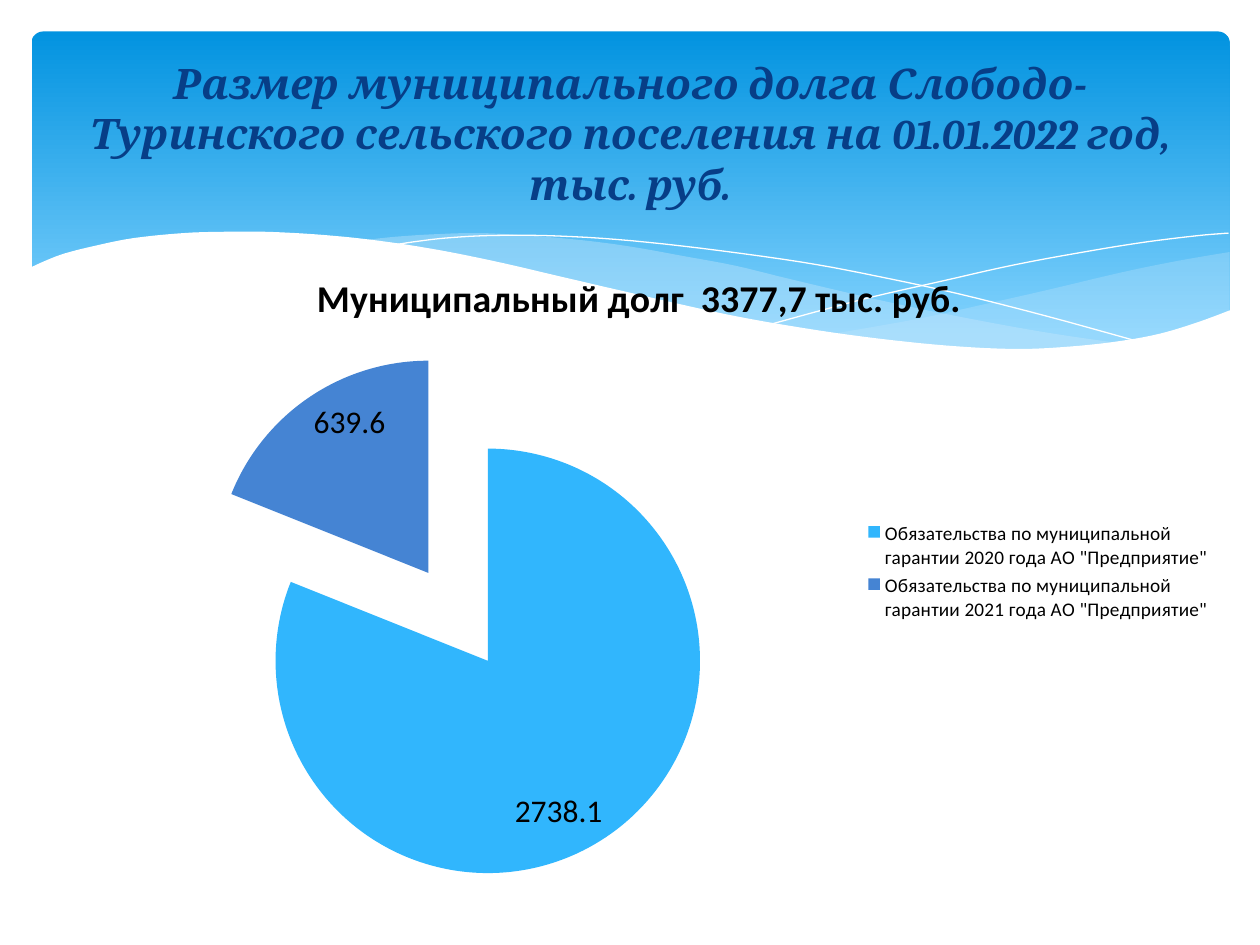
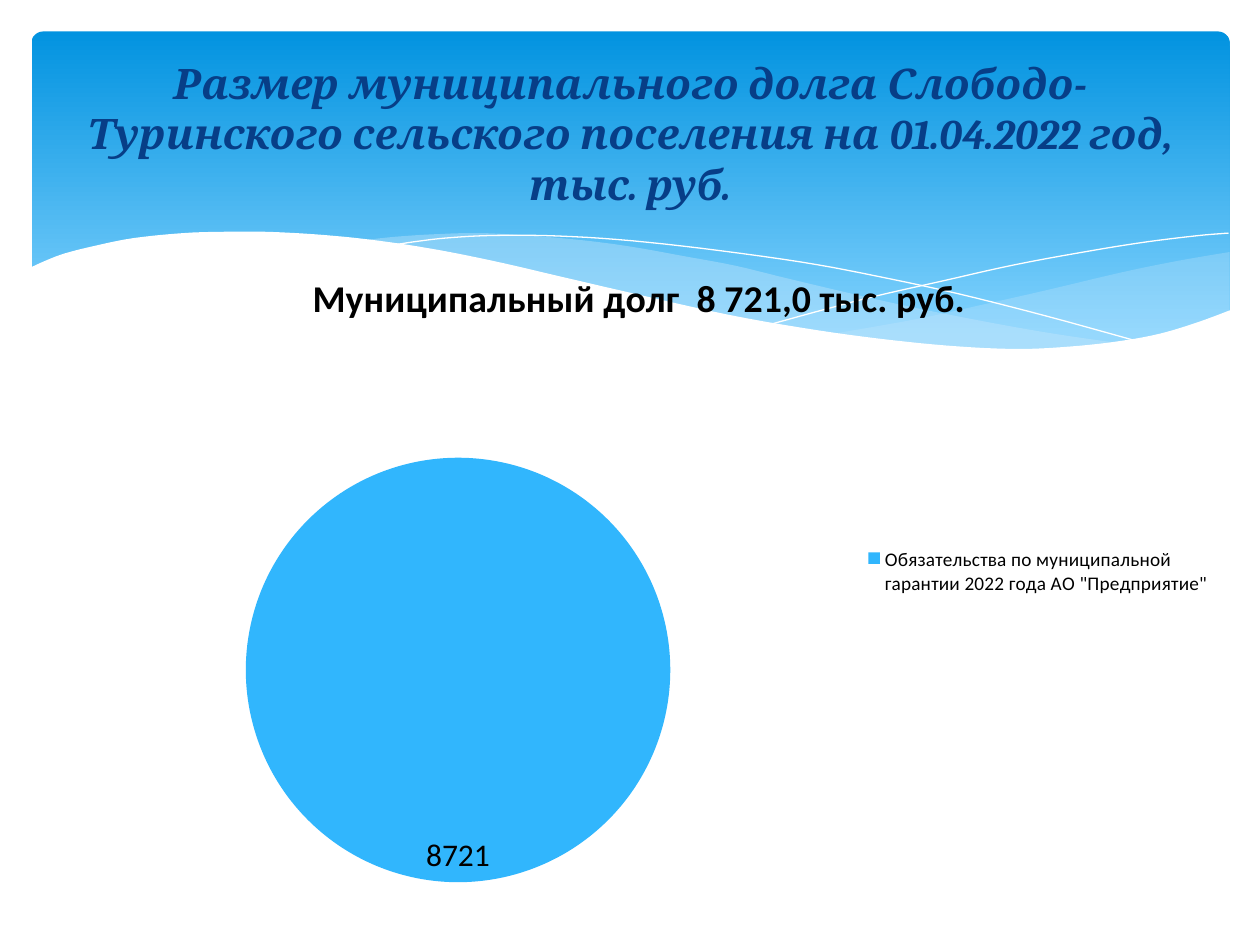
from lxml import etree
from pptx import Presentation
from pptx.chart.data import CategoryChartData
from pptx.dml.color import RGBColor
from pptx.enum.chart import XL_CHART_TYPE, XL_LABEL_POSITION, XL_LEGEND_POSITION
from pptx.enum.shapes import MSO_SHAPE
from pptx.enum.text import MSO_ANCHOR, PP_ALIGN
from pptx.oxml.ns import qn
from pptx.util import Inches, Pt

WHITE = RGBColor(0xFF, 0xFF, 0xFF)
BLACK = RGBColor(0x00, 0x00, 0x00)
NAVY = RGBColor(0x07, 0x3E, 0x87)
BAND_TOP = RGBColor(0x02, 0x93, 0xE0)
BAND_BOTTOM = RGBColor(0x83, 0xD3, 0xFE)
WAVE = RGBColor(0xC6, 0xE7, 0xFC)
SLICES = [RGBColor(0x31, 0xB6, 0xFD), RGBColor(0x45, 0x84, 0xD3)]

# Wave edges in inches; each edge is drawn as a smooth curve
RIGHT_WAVE = [
    [(9.76, 2), (9.35, 2.07), (8.91, 2.16), (8.32, 2.3), (7.79, 2.42),
     (7.29, 2.53), (6.61, 2.65)],
    [(6.61, 2.65), (7.05, 2.71), (7.45, 2.75), (7.81, 2.77), (8.14, 2.78),
     (8.54, 2.76), (8.89, 2.72), (9.21, 2.65), (9.49, 2.57), (9.76, 2.47)],
]
MIDDLE_WAVE = [
    [(8.93, 2.73), (8.37, 2.65), (7.75, 2.54), (7.06, 2.4), (6.29, 2.22),
     (5.84, 2.11), (5.41, 2.03), (5.02, 1.96), (4.65, 1.91), (4.2, 1.87),
     (3.8, 1.85), (3.44, 1.86), (3.13, 1.88), (2.86, 1.91)],
    [(2.86, 1.91), (3.42, 1.99), (4.04, 2.11), (4.49, 2.22), (5.3, 2.4),
     (6.01, 2.55), (6.5, 2.64), (6.95, 2.7), (7.36, 2.75), (7.73, 2.77),
     (8.07, 2.78), (8.48, 2.77), (8.93, 2.73)],
]
FALLING_LINE = [
    [(3.09, 1.95), (3.28, 1.92), (3.53, 1.89), (3.87, 1.87), (4.33, 1.87),
     (4.89, 1.9), (5.56, 1.97), (6.36, 2.08), (6.95, 2.19), (7.6, 2.33),
     (8.31, 2.51), (9.07, 2.72)],
]
RISING_LINE = [
    [(6.13, 2.57), (6.53, 2.46), (6.95, 2.35), (7.48, 2.23), (8.06, 2.1),
     (8.66, 1.99), (9.1, 1.92), (9.51, 1.87), (9.75, 1.85)],
]
WHITE_WAVE = [
    [(9.77, 2.46), (9.5, 2.56), (9.2, 2.65), (8.87, 2.71), (8.5, 2.75),
     (8.09, 2.77), (7.61, 2.75), (7.08, 2.7), (6.48, 2.62), (5.79, 2.5),
     (5.03, 2.33), (4.47, 2.2), (3.91, 2.07), (3.4, 1.97), (2.92, 1.9),
     (2.5, 1.86), (2.11, 1.84), (1.77, 1.84), (1.46, 1.85), (1.06, 1.89),
     (0.76, 1.95), (0.52, 2.01), (0.36, 2.07), (0.23, 2.13)],
    [(0.23, 3.29), (9.77, 3.29)],
]

GUARANTEE = 'Обязательства по муниципальной гарантии {} года АО "Предприятие"'
TITLE = ("Размер муниципального долга Слободо-Туринского сельского "
         "поселения на {} год, тыс. руб.")
DEBTS = [
    ("01.01.2022", "Муниципальный долг  3377,7 тыс. руб.",
     {2020: 2738.1, 2021: 639.6}),
    ("01.04.2022", "Муниципальный долг  8 721,0 тыс. руб.", {2022: 8721}),
]


def smooth(edge, steps=5):
    """Catmull-Rom curve through the points of an edge."""
    pts = [edge[0], *edge, edge[-1]]
    curve = [edge[0]]
    for a, b, c, d in zip(pts, pts[1:], pts[2:], pts[3:]):
        for i in range(1, steps + 1):
            t = i / steps
            curve.append(tuple(
                (2 * q + (r - p) * t + (2 * p - 5 * q + 4 * r - s) * t ** 2
                 + (3 * q - p - 3 * r + s) * t ** 3) / 2
                for p, q, r, s in zip(a, b, c, d)))
    return curve


def add_curve(slide, edges, close):
    pts = [(Inches(x), Inches(y)) for edge in edges for x, y in smooth(edge)]
    builder = slide.shapes.build_freeform(*pts[0])
    builder.add_line_segments(pts[1:], close=close)
    sp = builder.convert_to_shape()
    sp.shadow.inherit = False
    return sp


def add_wave(slide, edges, color, alpha=100):
    sp = add_curve(slide, edges, close=True)
    sp.fill.solid()
    sp.fill.fore_color.rgb = color
    sp.line.fill.background()
    if alpha < 100:
        clr = sp.fill._xPr.find(".//" + qn("a:srgbClr"))
        etree.SubElement(clr, qn("a:alpha"), val=str(alpha * 1000))


def add_hairline(slide, edges):
    sp = add_curve(slide, edges, close=False)
    sp.fill.background()
    sp.line.color.rgb = WHITE
    sp.line.width = Pt(0)


def add_band(slide):
    sp = slide.shapes.add_shape(MSO_SHAPE.ROUNDED_RECTANGLE, Inches(0.25),
                                Inches(0.25), Inches(9.51), Inches(2.7))
    sp.adjustments[0] = 0.034
    sp.shadow.inherit = False
    sp.line.fill.background()
    sp.fill.gradient()
    sp.fill.gradient_angle = 270
    stops = [(0, BAND_TOP), (0.9, BAND_BOTTOM)]
    for stop, (position, color) in zip(sp.fill.gradient_stops, stops):
        stop.position = position
        stop.color.rgb = color


def add_backdrop(slide):
    add_band(slide)
    add_wave(slide, RIGHT_WAVE, WAVE, 29)
    add_wave(slide, MIDDLE_WAVE, WAVE, 40)
    add_hairline(slide, FALLING_LINE)
    add_hairline(slide, RISING_LINE)
    add_wave(slide, WHITE_WAVE, WHITE)


def set_font(font, size, color, name="Calibri", bold=False, italic=False):
    font.name, font.size = name, Pt(size)
    font.bold, font.italic = bold, italic
    font.color.rgb = color


def add_title(slide, text):
    box = slide.shapes.add_textbox(Inches(0.5), Inches(0.37),
                                   Inches(9), Inches(1.37))
    tf = box.text_frame
    tf.word_wrap = True
    tf.vertical_anchor = MSO_ANCHOR.MIDDLE
    p = tf.paragraphs[0]
    p.text = text
    p.alignment = PP_ALIGN.CENTER
    set_font(p.font, 24, NAVY, "Cambria", bold=True, italic=True)


def add_debt_pie(slide, heading, debts):
    data = CategoryChartData()
    data.categories = [GUARANTEE.format(year) for year in debts]
    data.add_series("Series 1", list(debts.values()))
    chart = slide.shapes.add_chart(
        XL_CHART_TYPE.PIE, Inches(0.43), Inches(1.94),
        Inches(9.29), Inches(5.2), data).chart
    set_font(chart.font, 18, BLACK)

    # Heading and legend
    chart.has_title = True
    p = chart.chart_title.text_frame.paragraphs[0]
    p.text = heading
    set_font(p.font, 21.6, BLACK, bold=True)
    chart.chart_title.include_in_layout = False
    chart.has_legend = True
    chart.legend.position = XL_LEGEND_POSITION.RIGHT
    chart.legend.include_in_layout = False
    set_font(chart.legend.font, 11, BLACK)

    # Slices, pulled apart by a quarter of the radius
    plot = chart.plots[0]
    plot.vary_by_categories = True
    series = plot.series[0]
    for i in range(len(debts)):
        fill = series.points[i].format.fill
        fill.solid()
        fill.fore_color.rgb = SLICES[i]
    explosion = etree.Element(qn("c:explosion"), val="25")
    series._element.find(qn("c:dPt")).addprevious(explosion)

    plot.has_data_labels = True
    labels = plot.data_labels
    labels.show_value = True
    labels.show_percentage = False
    labels.position = XL_LABEL_POSITION.INSIDE_END
    set_font(labels.font, 18, BLACK)


def main():
    prs = Presentation()
    prs.slide_width, prs.slide_height = Inches(10), Inches(7.5)
    for date, heading, debts in DEBTS:
        slide = prs.slides.add_slide(prs.slide_layouts[6])
        add_backdrop(slide)
        add_debt_pie(slide, heading, debts)
        add_title(slide, TITLE.format(date))
    prs.save("out.pptx")


if __name__ == "__main__":
    main()
